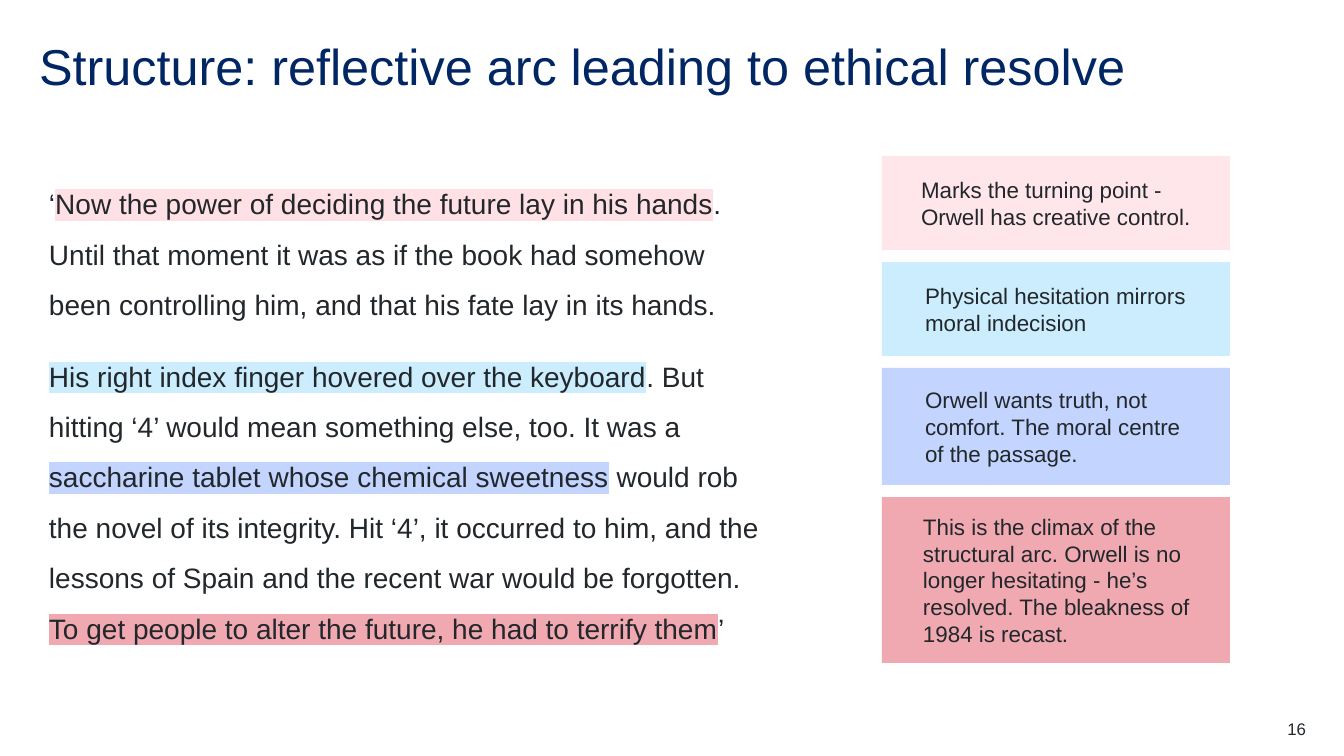
from lxml.etree import SubElement
from pptx import Presentation
from pptx.dml.color import RGBColor
from pptx.enum.shapes import MSO_SHAPE
from pptx.enum.text import MSO_ANCHOR, PP_ALIGN
from pptx.oxml.ns import qn
from pptx.util import Pt

SCALE = 914400 / 100.8
HUES = {
    "title": "002664", "ink": "22272B", "blush": "FFE0E5", "pale": "FFE6EA",
    "sky": "CBEDFD", "blue": "C3D5FF", "rose": "F0A9B1",
}
QUOTE = [
    [
        ("‘", None),
        ("Now the power of deciding the future lay in his hands", "blush"),
        (". Until that moment it was as if the book had somehow been "
         "controlling him, and that his fate lay in its hands.", None),
    ],
    [
        ("His right index finger hovered over the keyboard", "sky"),
        (". But hitting ‘4’ would mean something else, too. It was a ", None),
        ("saccharine tablet whose chemical sweetness", "blue"),
        (" would rob the novel of its integrity. Hit ‘4’, it occurred to him, "
         "and the lessons of Spain and the recent war would be forgotten. ", None),
        ("To get people to alter the future, he had to terrify them", "rose"),
        ("’", None),
    ],
]
NOTES = [
    ("pale", 94, 39, ["Marks the turning point - Orwell has creative control."]),
    ("sky", 94, 43, ["Physical hesitation mirrors moral indecision"]),
    ("blue", 117, 43, ["Orwell wants truth, not comfort. The moral centre ",
                       "of the passage."]),
    ("rose", 166, 41, ["This is the climax of the structural arc. Orwell is no "
                       "longer hesitating - he’s resolved. The bleakness of "
                       "1984 is recast."]),
]


def px(n):
    return round(n * SCALE)


def color(name):
    return RGBColor.from_string(HUES[name])


def add_run(para, text, size, hue="ink", mark=None):
    run = para.add_run()
    run.text = text
    run.font.size = Pt(size)
    run.font.name = "Arial"
    run.font.color.rgb = color(hue)
    if mark:
        props = run._r.get_or_add_rPr()
        light = SubElement(props, qn("a:highlight"))
        SubElement(light, qn("a:srgbClr")).set("val", HUES[mark])
        props.find(qn("a:solidFill")).addnext(light)


def set_frame(frame, left, top, right, anchor):
    frame.word_wrap = True
    frame.margin_left, frame.margin_right = px(left), px(right)
    frame.margin_top = frame.margin_bottom = px(top)
    frame.vertical_anchor = anchor


def add_text(slide, box, side=0, top=0, anchor=MSO_ANCHOR.TOP):
    frame = slide.shapes.add_textbox(*map(px, box)).text_frame
    set_frame(frame, side, top, side, anchor)
    return frame


def add_title(slide, box):
    para = add_text(slide, box, anchor=MSO_ANCHOR.MIDDLE).paragraphs[0]
    para.line_spacing = 0.9
    add_run(para, "Structure: reflective arc leading to ethical resolve", 36, "title")


def add_quote(slide, box):
    frame = add_text(slide, box, side=10, top=5)
    for i, parts in enumerate(QUOTE):
        para = frame.add_paragraph() if i else frame.paragraphs[0]
        para.line_spacing = 1.5
        para.space_after = Pt(15)
        for text, mark in parts:
            add_run(para, text, 20, mark=mark)


def add_notes(slide, box, gap):
    left, top, width, _ = box
    for hue, height, inset, lines in NOTES:
        note = slide.shapes.add_shape(
            MSO_SHAPE.RECTANGLE, *map(px, (left, top, width, height)))
        note.shadow.inherit = False
        note.fill.solid()
        note.fill.fore_color.rgb = color(hue)
        note.line.fill.background()
        set_frame(note.text_frame, inset, 5, 24, MSO_ANCHOR.MIDDLE)
        para = note.text_frame.paragraphs[0]
        para.alignment = PP_ALIGN.LEFT
        for i, line in enumerate(lines):
            if i:
                para.add_line_break()
            add_run(para, line, 16)
        top += height + gap


def add_page(slide, box):
    para = add_text(slide, box).paragraphs[0]
    para.alignment = PP_ALIGN.RIGHT
    add_run(para, "16", 12)


def main():
    deck = Presentation()
    deck.slide_width, deck.slide_height = px(1344), px(756)
    slide = deck.slides.add_slide(deck.slide_layouts[6])
    add_title(slide, (39, 39, 1266, 60))
    add_quote(slide, (39, 165, 741, 483))
    add_notes(slide, (882, 156, 348, 507), 12)
    add_page(slide, (1227, 719, 79, 20))
    deck.save("out.pptx")


if __name__ == "__main__":
    main()
